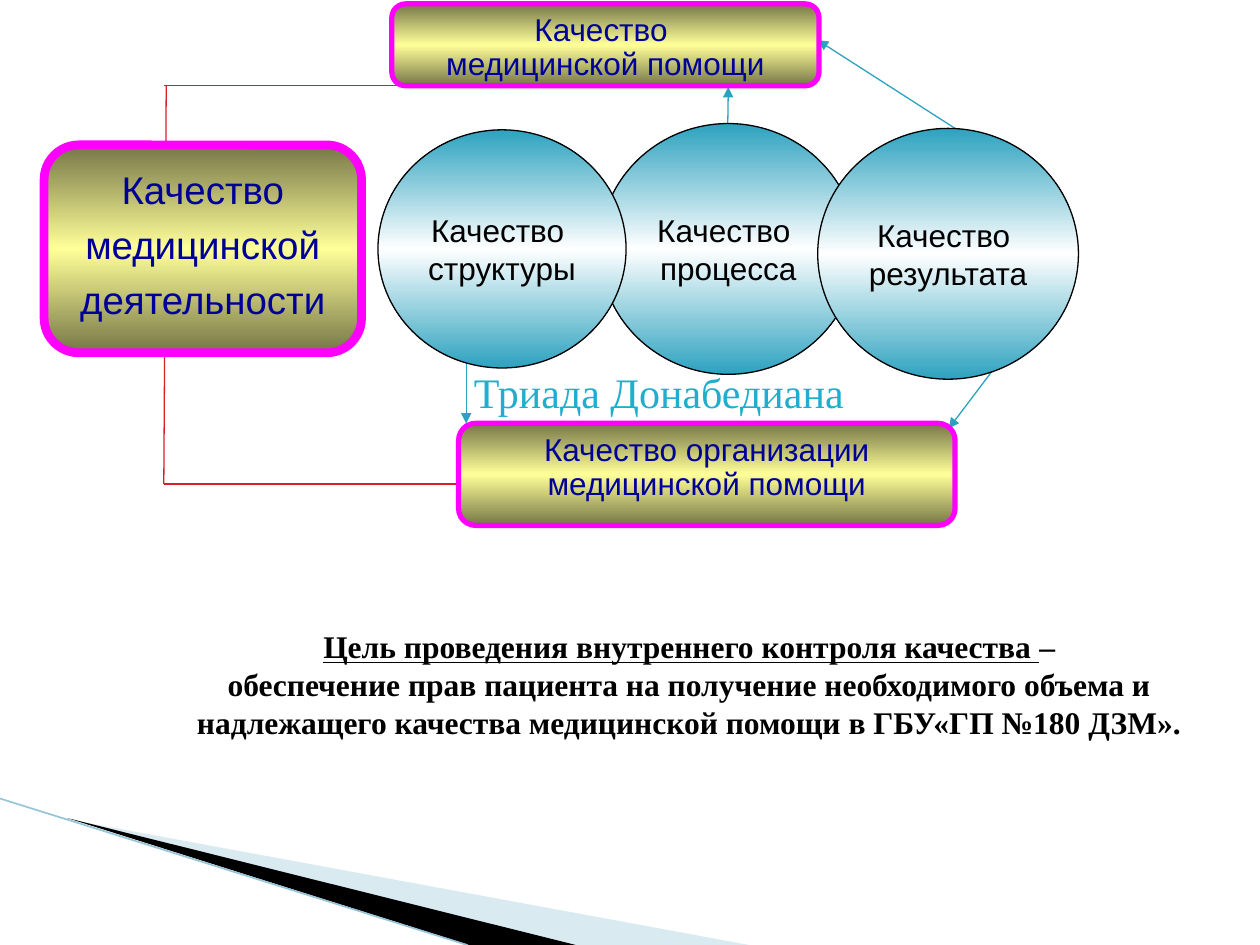
from lxml import etree
from pptx import Presentation
from pptx.dml.color import RGBColor
from pptx.enum.shapes import MSO_CONNECTOR, MSO_SHAPE
from pptx.enum.text import MSO_ANCHOR, PP_ALIGN
from pptx.oxml.ns import qn
from pptx.util import Pt
from copy import deepcopy

OVAL, ROUND = MSO_SHAPE.OVAL, MSO_SHAPE.ROUNDED_RECTANGLE
STRAIGHT = MSO_CONNECTOR.STRAIGHT
TOP, MIDDLE = MSO_ANCHOR.TOP, MSO_ANCHOR.MIDDLE
CENTER = PP_ALIGN.CENTER
SANS, SERIF = "Arial", "Times New Roman"
RED, TEAL, BLACK, NAVY, PINK = "DA1F28", "2DA2BF", "000000", "000099", "FF00FF"
OLIVE, YELLOW, WHITE = "767647", "FFFF99", "FFFFFF"

WEDGES = [
    ("A0CBDC", 40, [(39.6, 468.4), (428, 540), (328, 540)]),
    (BLACK, 100, [(38.5, 467.5), (329, 540), (268, 540)]),
]
EDGE = (0, 456.3, 267, 540)
LINKS = [
    (93.6, 276.5, 262, 276.5),
    (95, 49, 93.6, 276.5),
    (93.6, 49, 456.5, 49),
]
ARROWS = [
    (266.4, 201, 266.4, 242),
    (415.5, 98, 416.2, 49.7),
    (575.3, 201, 542.2, 244.8),
    (569.5, 88.6, 467.3, 23),
]
CIRCLES = [
    (["Качество ", "процесса"], (342.7, 70.6, 146.9, 143.3)),
    (["Качество ", "результата"], (467.3, 73.4, 149, 143.3)),
    (["Качество ", "структуры"], (216, 74.2, 141.8, 136.1)),
]
TRIAD = (["Триада Донабедиана"], (206.6, 205.9, 339.8, 36))
MAIN = (["Качество медицинской деятельности"], (25.2, 82.8, 181.4, 118.8))
CARDS = [
    (["Качество ", "медицинской помощи"], (223.9, 2.2, 244.1, 46.8)),
    (["Качество организации", "медицинской помощи"], (262.1, 241.9, 283.7, 58.3)),
]
GOAL = (
    [
        "Цель проведения внутреннего контроля качества ",
        "обеспечение прав пациента на получение необходимого объема и "
        "надлежащего качества медицинской помощи в ГБУ«ГП №180 ДЗМ».",
    ],
    (76.3, 355, 635, 72.7),
)


def rgb(code):
    return RGBColor.from_string(code)


def pts(vals):
    return [Pt(v) for v in vals]


def wedge(shapes, hue, alpha, dots):
    dots = [pts(d) for d in dots]
    pen = shapes.build_freeform(*dots[0], scale=1)
    pen.add_line_segments(dots[1:], close=True)
    form = pen.convert_to_shape()
    form.shadow.inherit = False
    form.fill.solid()
    form.fill.fore_color.rgb = rgb(hue)
    form.line.fill.background()
    if alpha < 100:
        node = form.fill._xPr.find(".//" + qn("a:srgbClr"))
        etree.SubElement(node, qn("a:alpha"), val=str(alpha * 1000))


def link(shapes, ends, hue, width=0.75, arrow=False):
    line = shapes.add_connector(STRAIGHT, *pts(ends))
    line.line.color.rgb = rgb(hue)
    line.line.width = Pt(width)
    props = line._element.spPr
    if arrow:
        etree.SubElement(props.find(qn("a:ln")), qn("a:tailEnd"), type="triangle")
    etree.SubElement(props, qn("a:effectLst"))


def blend(fill, outer, inner):
    fill.gradient()
    fill.gradient_angle = 90
    first, last = fill.gradient_stops
    first._gs.addnext(deepcopy(first._gs))
    for stop, hue, pos in zip(fill.gradient_stops, (outer, inner, outer), (0, 0.5, 1)):
        stop.color.rgb = rgb(hue)
        stop.position = pos


def write(shape, lines, size, font, hue, space=None, anchor=TOP, wrap=True, bold=False):
    frame = shape.text_frame
    frame.word_wrap = wrap
    frame.vertical_anchor = anchor
    frame.text = "\n".join(lines)
    for para in frame.paragraphs:
        para.alignment = CENTER
        para.line_spacing = space
        para.font.size = Pt(size)
        para.font.name = font
        para.font.bold = bold
        para.font.color.rgb = rgb(hue)
    return frame


def block(shapes, kind, box, outer, inner, edge, width):
    shape = shapes.add_shape(kind, *pts(box))
    shape.shadow.inherit = False
    blend(shape.fill, outer, inner)
    shape.line.color.rgb = rgb(edge)
    shape.line.width = Pt(width)
    return shape


def main():
    deck = Presentation()
    deck.slide_width, deck.slide_height = Pt(720), Pt(540)
    shapes = deck.slides.add_slide(deck.slide_layouts[6]).shapes

    for part in WEDGES:
        wedge(shapes, *part)
    link(shapes, EDGE, "97C5D8", 0.95)
    for ends in LINKS:
        link(shapes, ends, RED)
    for ends in ARROWS:
        link(shapes, ends, TEAL, arrow=True)

    for lines, box in CIRCLES:
        disc = block(shapes, OVAL, box, TEAL, WHITE, BLACK, 0.75)
        write(disc, lines, 18, SANS, BLACK, anchor=MIDDLE, wrap=False)

    lines, box = TRIAD
    write(shapes.add_textbox(*pts(box)), lines, 24, SERIF, "1FAECD")

    lines, box = MAIN
    card = block(shapes, ROUND, box, OLIVE, YELLOW, PINK, 5)
    frame = write(card, lines, 22, SANS, NAVY, 1.2)
    frame.margin_left = frame.margin_right = Pt(1.5)
    frame.margin_top = frame.margin_bottom = Pt(0.75)

    for lines, box in CARDS:
        card = block(shapes, ROUND, box, OLIVE, YELLOW, PINK, 3)
        write(card, lines, 18, SANS, NAVY, 0.9)

    lines, box = GOAL
    frame = write(shapes.add_textbox(*pts(box)), lines, 18, SERIF, BLACK, bold=True)
    head = frame.paragraphs[0]
    head.runs[0].font.underline = True
    head.add_run().text = "–"

    deck.save("out.pptx")


if __name__ == "__main__":
    main()
